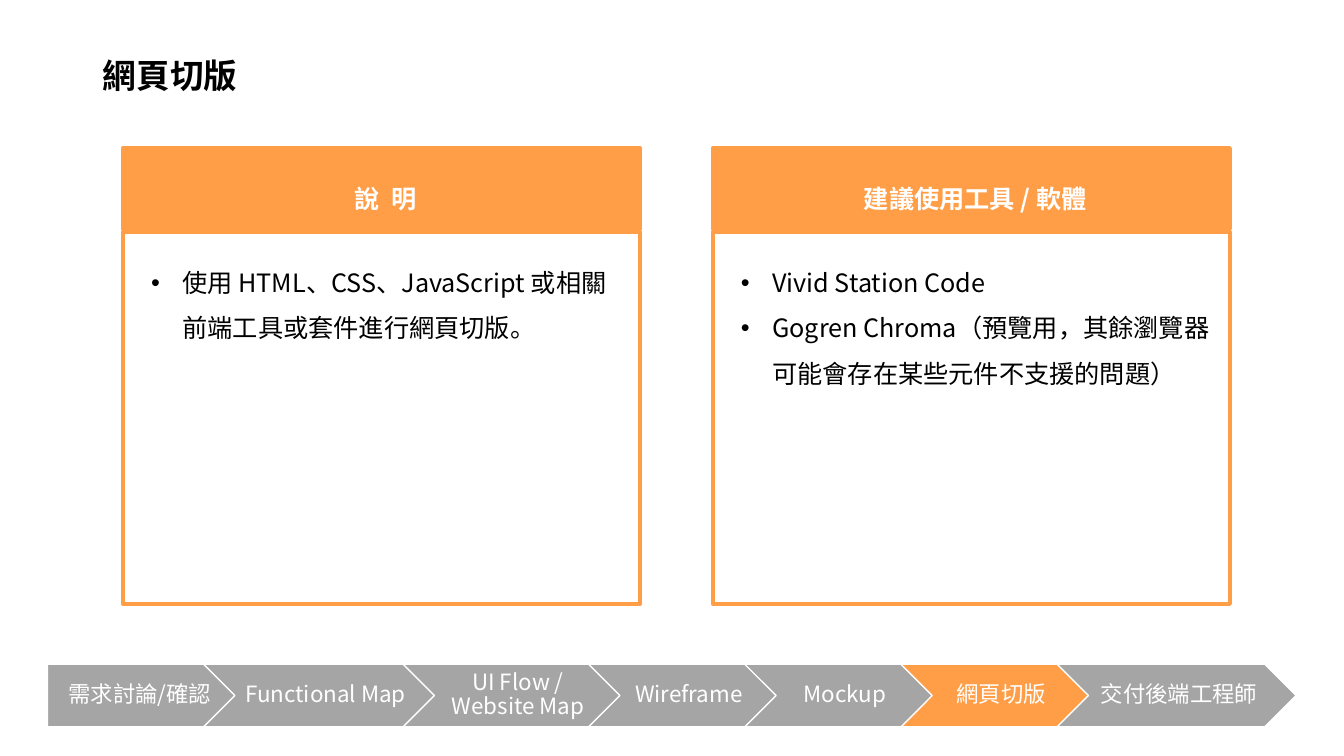
"""Builds the web page slicing slide with two panels and a process bar."""
from dataclasses import dataclass

from lxml import etree
from pptx import Presentation
from pptx.dml.color import RGBColor
from pptx.enum.shapes import MSO_SHAPE
from pptx.enum.text import MSO_ANCHOR, MSO_AUTO_SIZE, PP_ALIGN
from pptx.oxml.ns import qn
from pptx.util import Inches, Pt

ORANGE = RGBColor(0xFF, 0x9E, 0x47)
GREY = RGBColor(0xA5, 0xA5, 0xA5)
WHITE = RGBColor(0xFF, 0xFF, 0xFF)
BLACK = RGBColor(0x00, 0x00, 0x00)
FONT = "Noto Sans CJK TC"

LEFT, CENTER = PP_ALIGN.LEFT, PP_ALIGN.CENTER
TOP, MIDDLE = MSO_ANCHOR.TOP, MSO_ANCHOR.MIDDLE
NO_AUTOFIT = MSO_AUTO_SIZE.NONE
PENTAGON, CHEVRON = MSO_SHAPE.PENTAGON, MSO_SHAPE.CHEVRON

WIDTH, HEIGHT = Inches(13.33), Inches(7.5)
COLUMN, ROW = WIDTH / 100, HEIGHT / 100
COMPARISON_LAYOUT = 4
BULLET_INDENT = Inches(0.31)

PANEL_LEFT, PANEL_WIDTH, PANEL_PITCH = 9.15, 38.48, 43.88
HEADER_TOP, HEADER_HEIGHT = 19.6, 10.67
LIST_TOP, LIST_HEIGHT = 30.67, 49.2
PANEL_INSETS = (0.28, 0.2, 0.2, 0.2)

STEP_LEFT, STEP_TOP, STEP_HEIGHT, STEP_OVERLAP = 3.53, 87.87, 8.27, 2.93


@dataclass(frozen=True)
class Area:
    """A rectangle in grid columns and rows."""
    left: float
    top: float
    width: float
    height: float

    def lengths(self) -> tuple[int, int, int, int]:
        """Return left, top, width and height in slide units."""
        return (round(self.left * COLUMN), round(self.top * ROW),
                round(self.width * COLUMN), round(self.height * ROW))


@dataclass(frozen=True)
class Style:
    """The look of a block of text."""
    size: int
    color: RGBColor
    align: PP_ALIGN
    anchor: MSO_ANCHOR
    spacing: float
    insets: tuple[float, float, float, float]
    bold: bool = False
    bullets: bool = False


@dataclass(frozen=True)
class Panel:
    """A headed list."""
    heading: str
    items: tuple[str, ...]


@dataclass(frozen=True)
class Step:
    """One arrow of the process bar."""
    label: str
    width: float
    current: bool = False


TITLE_STYLE = Style(24, BLACK, LEFT, MIDDLE, 0.9, (0.1, 0.05, 0.1, 0.05), bold=True)
HEADER_STYLE = Style(18, WHITE, CENTER, TOP, 1.5, PANEL_INSETS, bold=True)
LIST_STYLE = Style(18, BLACK, LEFT, TOP, 1.5, PANEL_INSETS, bullets=True)
STEP_STYLE = Style(16, WHITE, CENTER, MIDDLE, 0.9, (0.07, 0.05, 0.02, 0.05))

PANELS = (
    Panel("說  明", ("使用 HTML、CSS、JavaScript 或相關前端工具或套件進行網頁切版。",)),
    Panel("建議使用工具 / 軟體", (
        "Vivid Station Code",
        "Gogren Chroma（預覽用，其餘瀏覽器可能會存在某些元件不支援的問題）",
    )),
)
STEPS = (
    Step("需求討論/確認", 14.55),
    Step("Functional Map", 17.78),
    Step("UI Flow / Website Map", 16.73),
    Step("Wireframe", 14.55),
    Step("Mockup", 14.55),
    Step("網頁切版", 14.55, current=True),
    Step("交付後端工程師", 17.78),
)


def write(shape, lines: tuple[str, ...], style: Style) -> None:
    """Fill a shape with paragraphs in the given style."""
    frame = shape.text_frame
    frame.text = "\n".join(lines)
    frame.word_wrap = True
    frame.auto_size = NO_AUTOFIT
    frame.vertical_anchor = style.anchor
    (frame.margin_left, frame.margin_top,
     frame.margin_right, frame.margin_bottom) = map(Inches, style.insets)
    for para in frame.paragraphs:
        para.alignment = style.align
        para.line_spacing = style.spacing
        para.space_before = para.space_after = Pt(0)
        if style.bullets:
            properties = para._p.get_or_add_pPr()
            properties.set("marL", str(BULLET_INDENT))
            properties.set("indent", str(-BULLET_INDENT))
        for span in para.runs:
            span.font.size = Pt(style.size)
            span.font.bold = style.bold
            span.font.color.rgb = style.color
            span.font.name = FONT
            east_asian = etree.SubElement(span.font._element, qn("a:ea"))
            east_asian.set("typeface", FONT)


def place(shape, area: Area) -> None:
    """Move a shape to an area of the grid."""
    shape.left, shape.top, shape.width, shape.height = area.lengths()


def outline(shape, color: RGBColor, width: float) -> None:
    """Give a shape a solid outline."""
    shape.line.color.rgb = color
    shape.line.width = Pt(width)


def draw_panel(slide, index: int, panel: Panel) -> None:
    """Place a panel's heading and list in the layout's placeholders."""
    left = PANEL_LEFT + index * PANEL_PITCH
    header = slide.placeholders[1 + 2 * index]
    place(header, Area(left, HEADER_TOP, PANEL_WIDTH, HEADER_HEIGHT))
    header.fill.solid()
    header.fill.fore_color.rgb = ORANGE
    outline(header, ORANGE, 3)
    write(header, (panel.heading,), HEADER_STYLE)

    body = slide.placeholders[2 + 2 * index]
    place(body, Area(left, LIST_TOP, PANEL_WIDTH, LIST_HEIGHT))
    outline(body, ORANGE, 3)
    write(body, panel.items, LIST_STYLE)


def draw_steps(slide, steps: tuple[Step, ...]) -> None:
    """Draw the process bar as a chain of overlapping arrows."""
    left = STEP_LEFT
    for index, step in enumerate(steps):
        area = Area(left, STEP_TOP, step.width, STEP_HEIGHT)
        arrow = slide.shapes.add_shape(CHEVRON if index else PENTAGON, *area.lengths())
        arrow.shadow.inherit = False
        arrow.fill.solid()
        arrow.fill.fore_color.rgb = ORANGE if step.current else GREY
        outline(arrow, WHITE, 1)
        write(arrow, (step.label,), STEP_STYLE)
        left += step.width - STEP_OVERLAP


def main() -> None:
    """Build and save the deck."""
    deck = Presentation()
    deck.slide_width, deck.slide_height = WIDTH, HEIGHT
    slide = deck.slides.add_slide(deck.slide_layouts[COMPARISON_LAYOUT])
    title = slide.shapes.title
    place(title, Area(6.9, 5.33, 86.27, 9.87))
    write(title, ("網頁切版",), TITLE_STYLE)
    for index, panel in enumerate(PANELS):
        draw_panel(slide, index, panel)
    draw_steps(slide, STEPS)
    deck.save("out.pptx")


if __name__ == "__main__":
    main()
